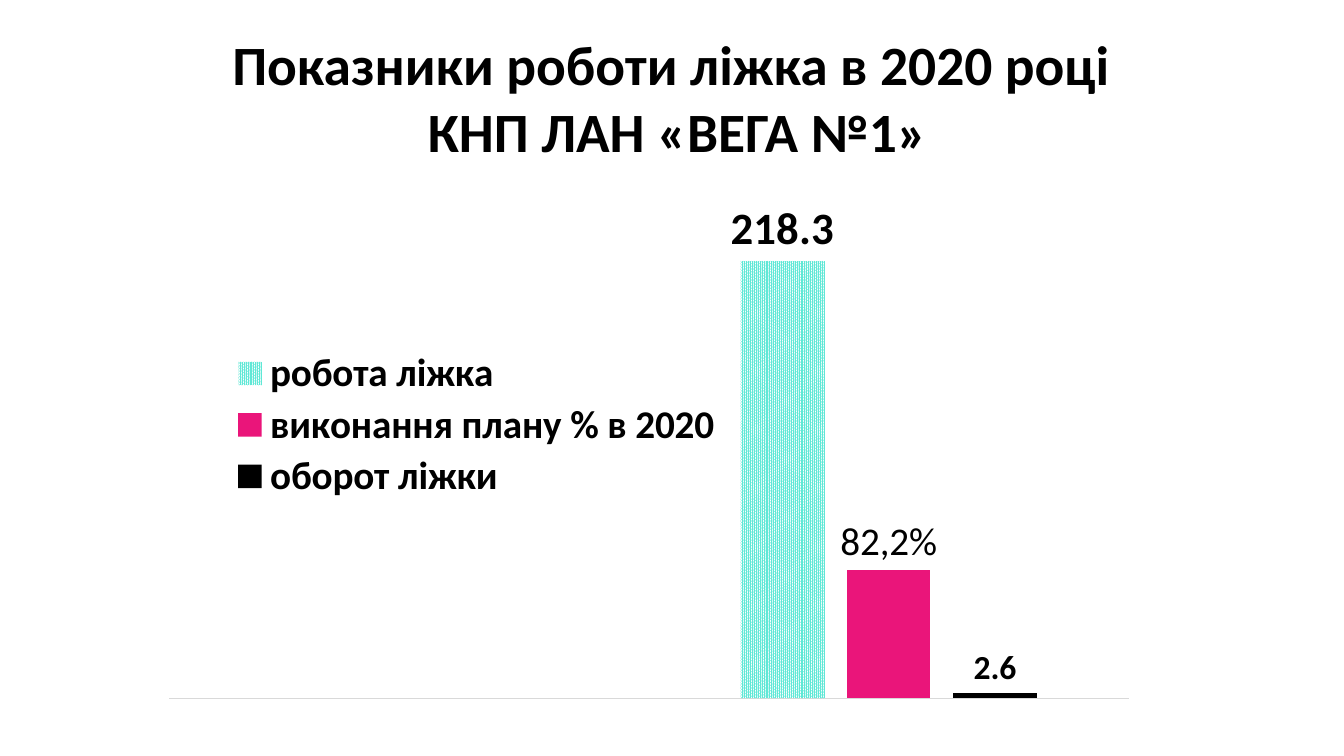
from pptx import Presentation
from pptx.chart.data import CategoryChartData
from pptx.dml.color import RGBColor
from pptx.enum.chart import (XL_CHART_TYPE as Kind, XL_LABEL_POSITION as Spot,
                             XL_LEGEND_POSITION as Side, XL_TICK_LABEL_POSITION as Tick,
                             XL_TICK_MARK as Mark)
from pptx.enum.dml import MSO_PATTERN as Pattern
from pptx.enum.text import MSO_ANCHOR as Anchor, PP_ALIGN as Align
from pptx.oxml import parse_xml
from pptx.oxml.ns import nsdecls, qn
from pptx.util import Inches, Pt

FONT = "Calibri"
TITLE = ("Показники роботи ліжка в 2020 році ", "КНП ЛАН «ВЕГА №1»")
ROWS = (
    ("робота ліжка", 218.3, "5FE8D6", 32, True),
    ("виконання плану % в 2020", 64.2, "EA157A", 28, False),
    ("оборот ліжки", 2.6, "000000", 24, True),
)


def paint(color, value):
    """Set a colour from a hex string."""
    color.rgb = RGBColor.from_string(value)


def style(font, size, bold=False, color="000000"):
    """Set the face, size, weight and colour of a font."""
    font.name, font.size, font.bold = FONT, Pt(size), bold
    font.fill.solid()
    paint(font.fill.fore_color, color)


def add_title(slide):
    """Add the two centred title lines."""
    box = slide.shapes.add_textbox(Inches(1.22), Inches(0.52), Inches(11), Inches(0.88))
    frame = box.text_frame
    frame.word_wrap = True
    frame.vertical_anchor = Anchor.MIDDLE
    para = frame.paragraphs[0]
    para.alignment = Align.CENTER
    for i, line in enumerate(TITLE):
        if i:
            para.add_line_break()
        run = para.add_run()
        run.text = line
        style(run.font, 39.6, True)


def place(node, index, left, top, width, height, inner=False):
    """Give a chart part a manual layout in fractions of the chart."""
    for old in node.findall(qn("c:layout")):
        node.remove(old)
    target = '<c:layoutTarget val="inner"/>' if inner else ""
    node.insert(index, parse_xml(
        f'<c:layout {nsdecls("c")}><c:manualLayout>{target}'
        '<c:xMode val="edge"/><c:yMode val="edge"/>'
        f'<c:x val="{left}"/><c:y val="{top}"/><c:w val="{width}"/><c:h val="{height}"/>'
        '</c:manualLayout></c:layout>'))


def set_axes(chart):
    """Keep only the base line of the axes."""
    base, scale = chart.category_axis, chart.value_axis
    base.tick_label_position = Tick.NONE
    base.major_tick_mark = base.minor_tick_mark = Mark.NONE
    base.format.line.width = Pt(1)
    paint(base.format.line.color, "D9D9D9")
    scale.visible = scale.has_major_gridlines = False
    scale.minimum_scale, scale.maximum_scale = 0, 250


def set_series(series, color, size, bold):
    """Fill one series and label its bars."""
    series.format.fill.solid()
    paint(series.format.fill.fore_color, color)
    labels = series.data_labels
    labels.show_value = True
    labels.position = Spot.OUTSIDE_END
    style(labels.font, size, bold)


def set_legend(chart):
    """Put the legend to the left of the bars."""
    chart.has_legend = True
    legend = chart.legend
    legend.position = Side.BOTTOM
    legend.include_in_layout = False
    style(legend.font, 28, True)
    place(legend._element, 1, 0.06, 0.29, 0.52, 0.31)


def add_bars(slide):
    """Add the clustered column chart."""
    data = CategoryChartData()
    data.categories = ["1", "2"]
    for name, value, *_ in ROWS:
        data.add_series(name, (None, value))
    chart = slide.shapes.add_chart(Kind.COLUMN_CLUSTERED, Inches(1.67), Inches(1.96),
                                   Inches(9.53), Inches(5.07), data).chart
    chart.has_title = False
    style(chart.font, 10)
    set_axes(chart)
    set_legend(chart)
    plot = chart.plots[0]
    plot.vary_by_categories = False
    plot.gap_width, plot.overlap = 219, -27
    for series, (_, _, *look) in zip(plot.series, ROWS):
        set_series(series, *look)
    work, plan, _ = plot.series
    fill = work.format.fill
    fill.patterned()
    fill.pattern = Pattern.PERCENT_90
    paint(fill.fore_color, ROWS[0][2])
    paint(fill.back_color, "FFFFFF")
    label = plan.points[1].data_label
    run = label.text_frame.paragraphs[0].add_run()
    run.text = "82,2%"
    style(run.font, 28)
    label.position = Spot.OUTSIDE_END
    place(chart._chartSpace.chart.plotArea, 0, 0, 0, 1, 0.98, True)


def main():
    """Build and save the slide."""
    deck = Presentation()
    deck.slide_width, deck.slide_height = Inches(13.33), Inches(7.5)
    slide = deck.slides.add_slide(deck.slide_layouts[6])
    add_title(slide)
    add_bars(slide)
    deck.save("out.pptx")


if __name__ == "__main__":
    main()
